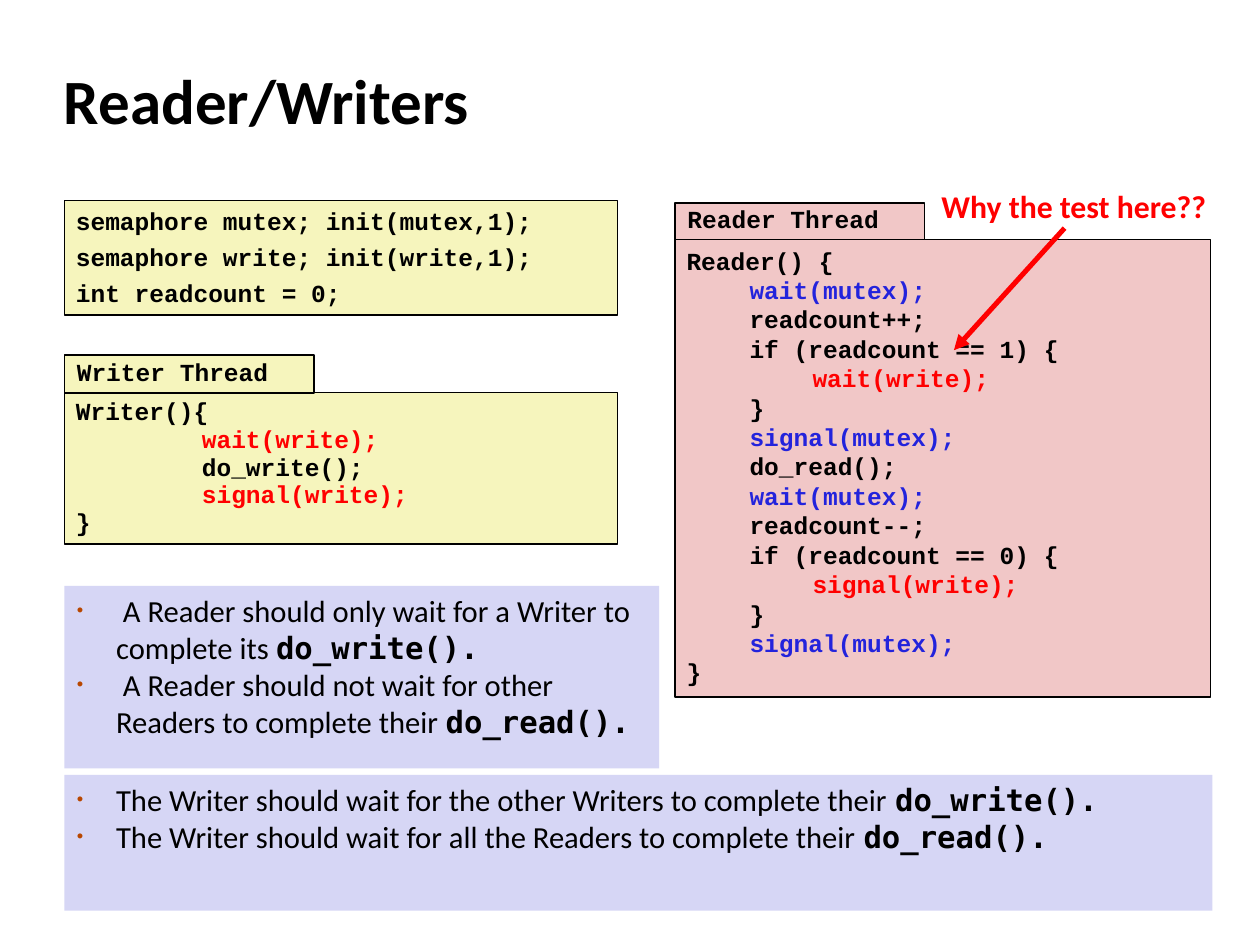
from dataclasses import dataclass

from lxml.etree import SubElement
from pptx import Presentation
from pptx.dml.color import RGBColor
from pptx.enum.shapes import MSO_CONNECTOR, MSO_SHAPE
from pptx.enum.text import MSO_ANCHOR, MSO_AUTO_SIZE, PP_ALIGN
from pptx.oxml.ns import qn
from pptx.util import Cm, Pt


@dataclass(frozen=True)
class Theme:
    """Colours, fonts and type sizes of the slide."""
    ink: str = "000000"
    red: str = "FF0000"
    blue: str = "2323DC"
    rust: str = "B84700"
    cream: str = "F6F5BD"
    rose: str = "F1C7C7"
    lilac: str = "D6D6F5"
    sans: str = "Calibri"
    code: str = "Courier New"
    mono: str = "DejaVu Sans Mono"
    head: float = 36
    call: float = 18.1
    body: float = 17.5
    small: float = 14


class Board:
    """Draws each kind of element on the current slide."""

    def __init__(self, slide, theme):
        self.slide = slide
        self.theme = theme

    def place(self, shape, box):
        """Move a shape to a box given in centimetres."""
        shape.left, shape.top, shape.width, shape.height = map(Cm, box)

    def paint(self, shape, fill):
        """Give a shape a plain fill."""
        shape.fill.solid()
        shape.fill.fore_color.rgb = RGBColor.from_string(fill)

    def style(self, para, name, size, color, bold=True, lead=1.0, before=0):
        """Set the font and spacing of a paragraph."""
        para.alignment = PP_ALIGN.LEFT
        para.line_spacing = lead
        para.space_before = Pt(before)
        font = para.font
        font.size, font.bold = Pt(size), bold
        if name:
            font.name = name
        font.color.rgb = RGBColor.from_string(color)

    def frame(self, shape, side, edge, anchor=MSO_ANCHOR.TOP):
        """Set insets, wrap and anchor, and return the text frame."""
        frame = shape.text_frame
        frame.word_wrap = True
        frame.auto_size = MSO_AUTO_SIZE.NONE
        frame.vertical_anchor = anchor
        frame.margin_left = frame.margin_right = Cm(side)
        frame.margin_top = frame.margin_bottom = Cm(edge)
        return frame

    def title(self, text, box):
        """Fill the title placeholder."""
        shape = self.slide.shapes.title
        self.place(shape, box)
        frame = self.frame(shape, 0.25, 0.13, MSO_ANCHOR.MIDDLE)
        frame.text = text
        self.style(frame.paragraphs[0], self.theme.sans, self.theme.head,
                   self.theme.ink, lead=0.9)

    def points(self, index, box, rows):
        """Fill a body placeholder with bullets that end in a call."""
        theme = self.theme
        shape = self.slide.placeholders[index]
        self.place(shape, box)
        self.paint(shape, theme.lilac)
        frame = self.frame(shape, 0.25, 0.13)
        for at, (text, call) in enumerate(rows):
            para = frame.add_paragraph() if at else frame.paragraphs[0]
            self.bullet(para)
            self.style(para, None, theme.body, theme.ink, bold=None)
            for part, name, bold in ((text, theme.sans, False),
                                     (call, theme.mono, True)):
                run = para.add_run()
                run.text = part
                run.font.name, run.font.bold = name, bold

    def bullet(self, para):
        """Give a paragraph a small rust bullet and a hanging indent."""
        props = para._p.get_or_add_pPr()
        props.set("marL", str(Cm(0.79)))
        props.set("indent", str(-Cm(0.79)))
        tint = SubElement(props, qn("a:buClr"))
        SubElement(tint, qn("a:srgbClr"), val=self.theme.rust)
        SubElement(props, qn("a:buSzPct"), val="60000")
        SubElement(props, qn("a:buFont"), typeface="Arial")
        SubElement(props, qn("a:buChar"), char="•")

    def panel(self, box, fill, line):
        """Add a filled box with a black outline."""
        shape = self.slide.shapes.add_shape(MSO_SHAPE.RECTANGLE, *map(Cm, box))
        shape.shadow.inherit = False
        self.paint(shape, fill)
        shape.line.color.rgb = RGBColor.from_string(self.theme.ink)
        shape.line.width = Pt(line)
        return shape

    def code(self, box, fill, rows, lead=1.0, first=0, rest=0):
        """Add a box of code from rows of depth, text and colour."""
        frame = self.frame(self.panel(box, fill, 0.75), 0.23, 0.12)
        for at, (depth, text, color) in enumerate(rows):
            para = frame.add_paragraph() if at else frame.paragraphs[0]
            para.text = text
            para._p.get_or_add_pPr().set("marL", str(Cm(1.27 * depth)))
            self.style(para, self.theme.code, self.theme.small, color,
                       lead=lead, before=rest if at else first)

    def tag(self, text, box, fill):
        """Add the name tag of a code box."""
        shape = self.panel(box, fill, 1)
        frame = self.frame(shape, 0.25, 0.13, MSO_ANCHOR.MIDDLE)
        frame.text = text
        self.style(frame.paragraphs[0], self.theme.code, self.theme.small,
                   self.theme.ink, lead=0.8, before=6.8)

    def label(self, text, box):
        """Add a red remark."""
        shape = self.slide.shapes.add_textbox(*map(Cm, box))
        frame = self.frame(shape, 0.23, 0.1)
        frame.text = text
        self.style(frame.paragraphs[0], self.theme.sans, self.theme.call,
                   self.theme.red, lead=0.95)

    def arrow(self, ends):
        """Add a red arrow."""
        link = self.slide.shapes.add_connector(
            MSO_CONNECTOR.STRAIGHT, *map(Cm, ends))
        link.line.color.rgb = RGBColor.from_string(self.theme.red)
        link.line.width = Pt(2.89)
        SubElement(link.line._get_or_add_ln(), qn("a:tailEnd"), type="triangle")
        SubElement(link._element.spPr, qn("a:effectLst"))


def main():
    """Build the slide and save it."""
    deck = Presentation()
    deck.slide_width, deck.slide_height = Cm(25.4), Cm(19.05)
    theme = Theme()
    ink, red, blue = theme.ink, theme.red, theme.blue
    board = Board(deck.slides.add_slide(deck.slide_layouts[3]), theme)
    left, right, wide = 1.3, 13.61, 11.15

    board.title("Reader/Writers", (1.04, 1.04, 21.08, 2.11))
    board.points(1, (left, 11.81, 11.99, 3.68), [
        (" A Reader should only wait for a Writer to complete its ",
         "do_write()."),
        (" A Reader should not wait for other Readers to complete their ",
         "do_read()."),
    ])
    board.points(2, (left, 15.62, 23.14, 2.74), [
        ("The Writer should wait for the other Writers to complete their ",
         "do_write()."),
        ("The Writer should wait for all the Readers to complete their ",
         "do_read()."),
    ])
    board.code((right, 4.83, 10.8, 9.22), theme.rose, [
        (0, "Reader() {", ink),
        (1, "wait(mutex);", blue),
        (1, "readcount++;", ink),
        (1, "if (readcount == 1) {", ink),
        (2, "wait(write);", red),
        (1, "}", ink),
        (1, "signal(mutex);", blue),
        (1, "do_read();", ink),
        (1, "wait(mutex);", blue),
        (1, "readcount--;", ink),
        (1, "if (readcount == 0) {", ink),
        (2, "signal(write);", red),
        (1, "}", ink),
        (1, "signal(mutex);", blue),
        (0, "}", ink),
    ], first=3.6)
    board.code((left, 4.04, wide, 2.31), theme.cream, [
        (0, "semaphore mutex; init(mutex,1);", ink),
        (0, "semaphore write; init(write,1);", ink),
        (0, "int readcount = 0;", ink),
    ], first=3.6, rest=3.6)
    board.code((left, 7.92, wide, 3.05), theme.cream, [
        (0, "Writer(){", ink),
        (2, "wait(write);", red),
        (2, "do_write();", ink),
        (2, "signal(write);", red),
        (0, "}", ink),
    ], lead=0.94)
    board.tag("Writer Thread", (left, 7.16, 5.03, 0.76), theme.cream)
    board.tag("Reader Thread", (right, 4.09, 5.03, 0.74), theme.rose)
    board.label("Why the test here??", (18.75, 3.73, 5.99, 0.97))
    board.arrow((21.46, 4.6, 19.23, 7.06))
    deck.save("out.pptx")


if __name__ == "__main__":
    main()
